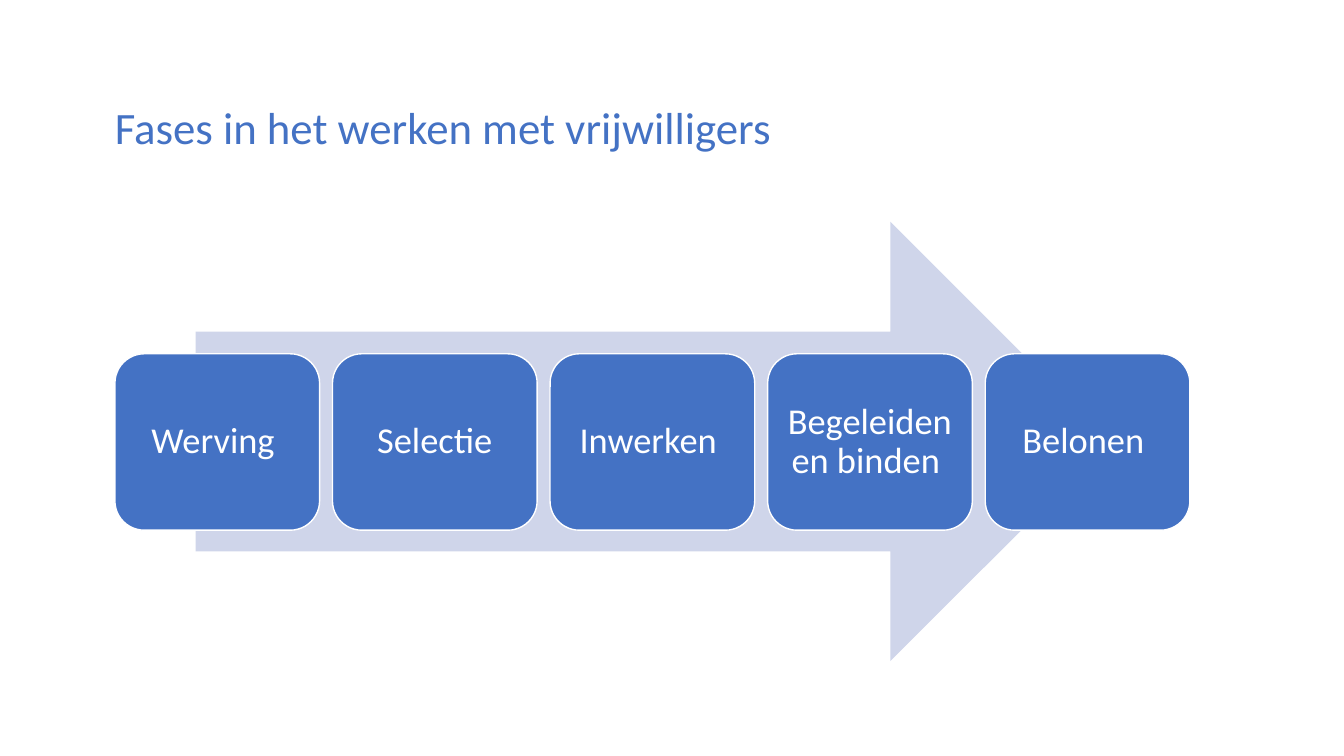
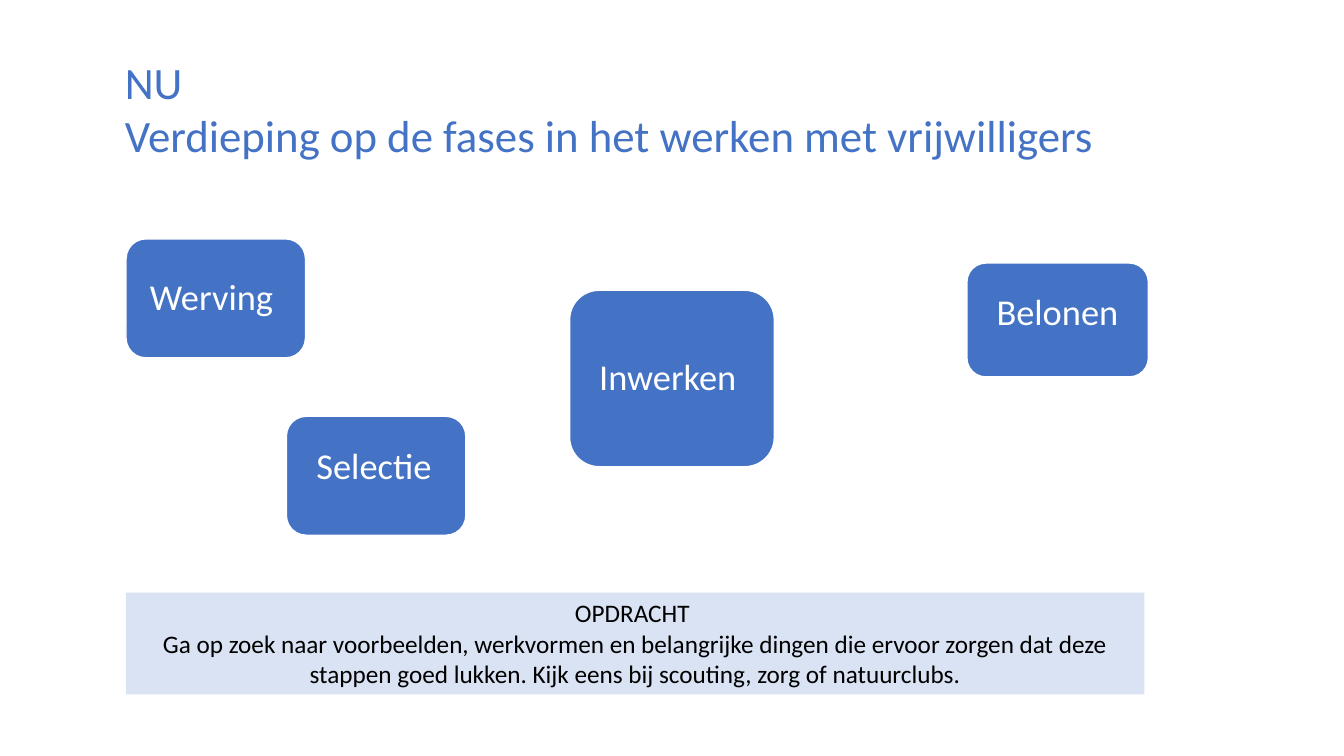
from pptx import Presentation
from pptx.dml.color import RGBColor
from pptx.enum.shapes import MSO_SHAPE as Shape
from pptx.enum.text import MSO_ANCHOR as Anchor, PP_ALIGN as Align
from pptx.util import Inches, Pt

# Content
PHASES_TITLE = ["Fases in het werken met vrijwilligers"]
PHASES = ["Werving ", "Selectie", "Inwerken ", "Begeleiden en binden ", "Belonen "]

DEEPENING_TITLE = ["NU", "Verdieping op de fases in het werken met vrijwilligers"]
# Phase, (left, top, width, height), (text shift right, text shift down)
SCATTERED_PHASES = [
    ("Werving ", (1.25, 2.37, 1.78, 1.18), (0, 0)),
    ("Selectie", (2.84, 4.13, 1.78, 1.18), (-0.02, -0.08)),
    ("Belonen ", (9.59, 2.61, 1.8, 1.13), (0.04, -0.06)),
    ("Inwerken ", (5.65, 2.88, 2.03, 1.75), (0, 0)),
]
ASSIGNMENT = [
    "OPDRACHT ",
    "Ga op zoek naar voorbeelden, werkvormen en belangrijke dingen die ervoor "
    "zorgen dat deze stappen goed lukken. Kijk eens bij scouting, zorg of natuurclubs.",
]

# Shared style
FONT = "Calibri"
COLORS = {"blue": "4472C4", "arrow": "CFD5EA", "pale": "DAE3F3",
          "white": "FFFFFF", "black": "000000"}
PADDING = 0.11


def color(name):
    return RGBColor.from_string(COLORS[name])


def write(frame, lines, size, ink, align=Align.LEFT, spacing=1.0):
    frame.word_wrap = True
    for i, line in enumerate(lines):
        paragraph = frame.paragraphs[0] if i == 0 else frame.add_paragraph()
        paragraph.text = line
        paragraph.alignment = align
        paragraph.line_spacing = spacing
        paragraph.font.name = FONT
        paragraph.font.size = Pt(size)
        paragraph.font.color.rgb = color(ink)


def add_title(slide, lines, box):
    title = slide.shapes.add_textbox(*map(Inches, box))
    write(title.text_frame, lines, 32, "blue")


def add_block(slide, kind, box, fill, outline=None):
    block = slide.shapes.add_shape(kind, *map(Inches, box))
    block.shadow.inherit = False
    block.fill.solid()
    block.fill.fore_color.rgb = color(fill)
    if outline:
        block.line.color.rgb = color(outline)
        block.line.width = Pt(1)
    else:
        block.line.fill.background()
    return block


def add_phase(slide, phase, box, shift=(0, 0)):
    frame = add_block(slide, Shape.ROUNDED_RECTANGLE, box, "blue", "white").text_frame
    right, down = shift
    frame.margin_left, frame.margin_right = Inches(PADDING + right), Inches(PADDING - right)
    frame.margin_top, frame.margin_bottom = Inches(PADDING + down), Inches(PADDING - down)
    frame.vertical_anchor = Anchor.MIDDLE
    write(frame, [phase], 26, "white", Align.CENTER, 0.9)


def build_phases(slide):
    add_block(slide, Shape.RIGHT_ARROW, (1.94, 2.2, 9.07, 4.36), "arrow")
    left, step = 1.14, 2.158
    for i, phase in enumerate(PHASES):
        add_phase(slide, phase, (left + i * step, 3.51, 2.03, 1.75))
    add_title(slide, PHASES_TITLE, (1.04, 0.94, 10.86, 1.18))


def build_deepening(slide):
    add_title(slide, DEEPENING_TITLE, (1.14, 0.49, 10.86, 1.72))
    for phase, box, shift in SCATTERED_PHASES:
        add_phase(slide, phase, box, shift)
    assignment = add_block(slide, Shape.RECTANGLE, (1.25, 5.88, 10.1, 1.01), "pale")
    assignment.text_frame.vertical_anchor = Anchor.TOP
    write(assignment.text_frame, ASSIGNMENT, 18, "black", Align.CENTER)


def main():
    deck = Presentation()
    deck.slide_width, deck.slide_height = Inches(13.33), Inches(7.5)
    blank = deck.slide_layouts[6]
    for build in (build_phases, build_deepening):
        build(deck.slides.add_slide(blank))
    deck.save("out.pptx")


if __name__ == "__main__":
    main()
